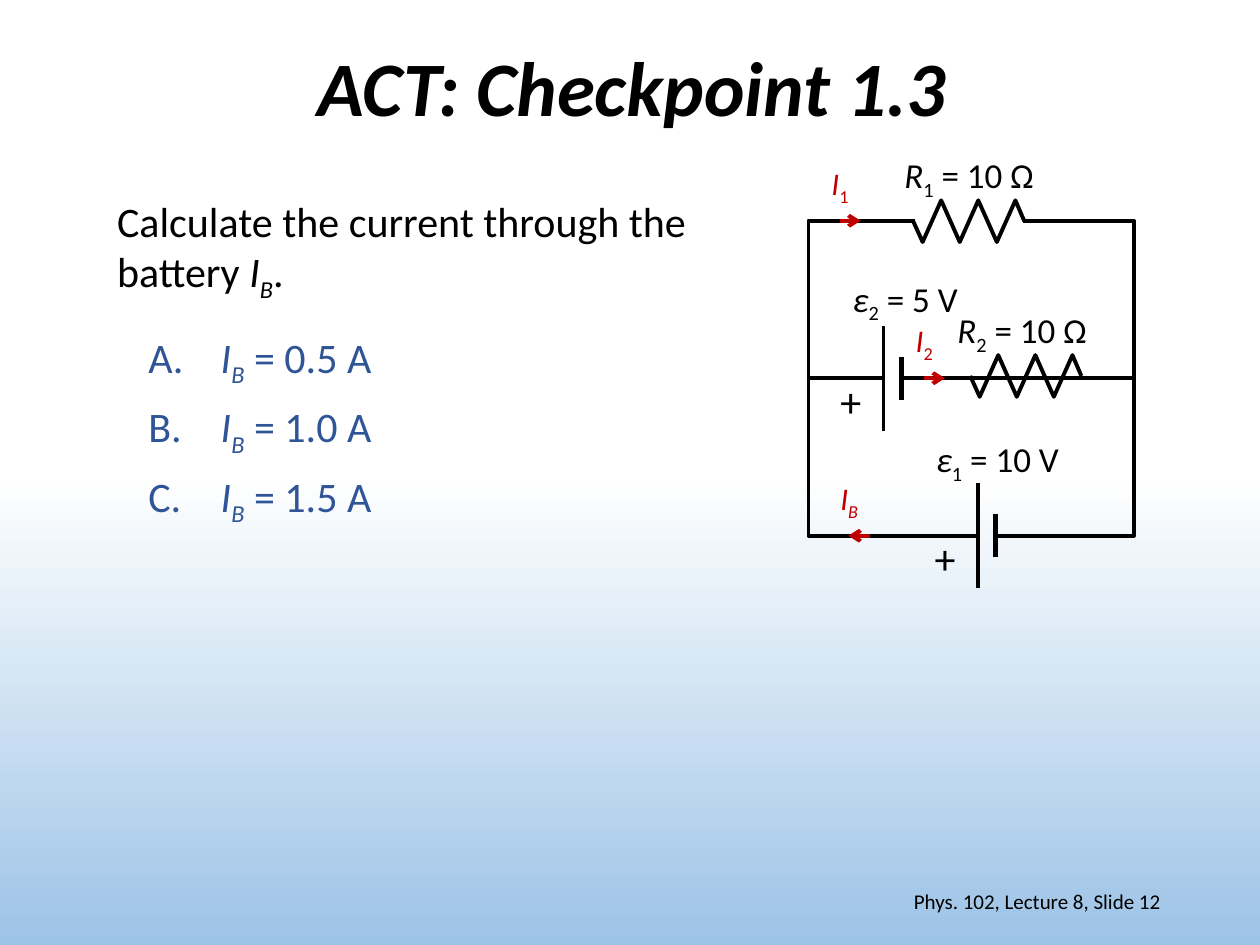
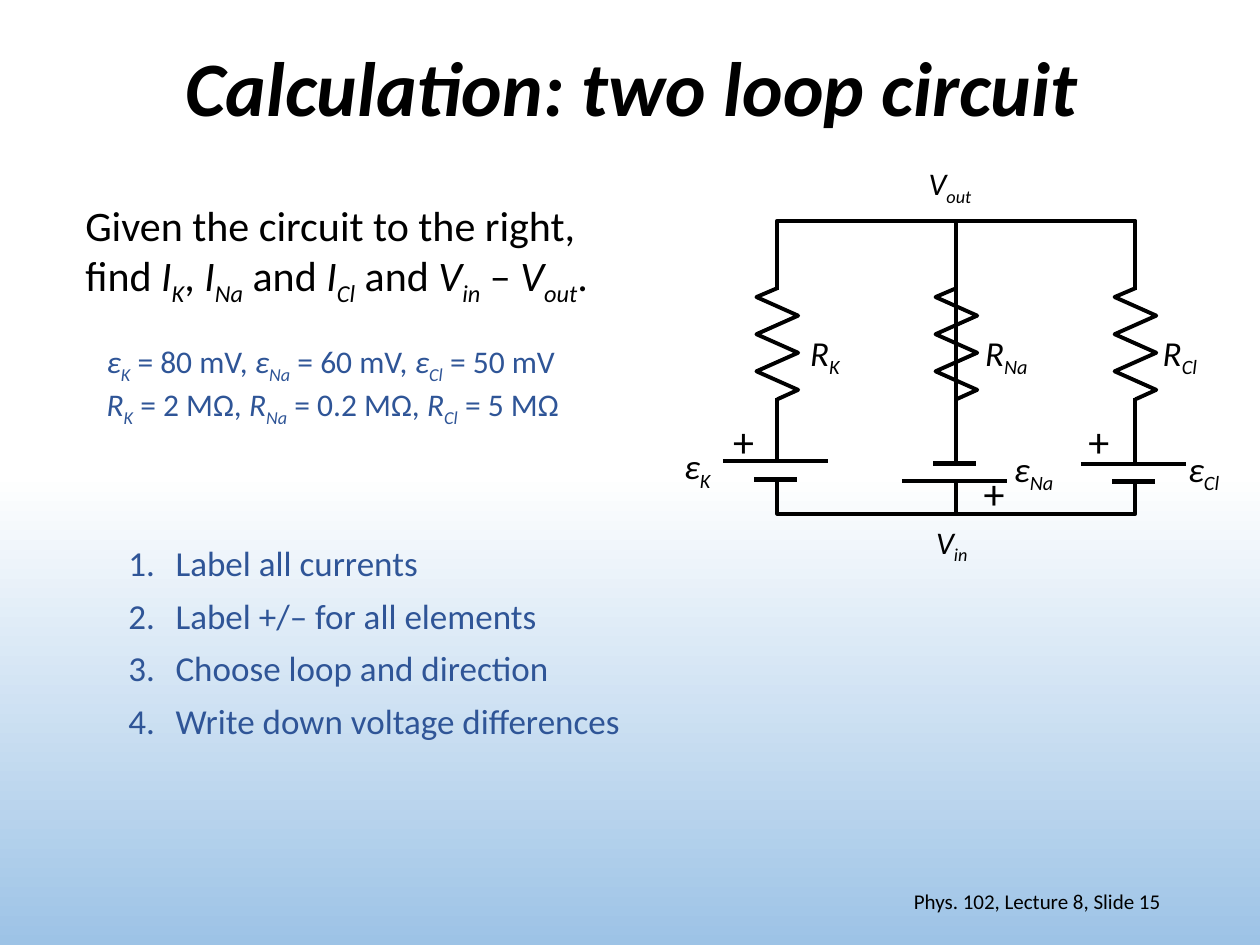
from lxml import etree
from pptx import Presentation
from pptx.dml.color import RGBColor
from pptx.enum.shapes import MSO_CONNECTOR, MSO_SHAPE
from pptx.enum.text import MSO_ANCHOR, MSO_AUTO_SIZE, PP_ALIGN
from pptx.oxml.ns import qn
from pptx.util import Cm, Pt

STRAIGHT = MSO_CONNECTOR.STRAIGHT
RECT = MSO_SHAPE.RECTANGLE
TOP, MIDDLE = MSO_ANCHOR.TOP, MSO_ANCHOR.MIDDLE
LEFT, CENTER, RIGHT = PP_ALIGN.LEFT, PP_ALIGN.CENTER, PP_ALIGN.RIGHT
GROW, FIXED = MSO_AUTO_SIZE.SHAPE_TO_FIT_TEXT, MSO_AUTO_SIZE.NONE

COLORS = {"ink": "000000", "answer": "2F5597", "current": "C00000",
          "sky_top": "FFFFFF", "sky_bottom": "9DC3E6"}
FONT = "Calibri"
PLUS = ("+",)


class Lecture:
    """Draws lecture slides with circuit diagrams, all lengths in centimetres."""

    def __init__(self):
        self.prs = Presentation()
        self.prs.slide_width, self.prs.slide_height = Cm(25.4), Cm(19.05)
        self.s = None

    def rgb(self, color):
        return RGBColor.from_string(COLORS[color])

    def slide(self, title, number):
        self.s = self.prs.slides.add_slide(self.prs.slide_layouts[6])
        fill = self.s.background.fill
        fill.gradient()
        fill.gradient_angle = 270
        for stop, pos, color in zip(fill.gradient_stops, (0.5, 1),
                                    ("sky_top", "sky_bottom")):
            stop.position = pos
            stop.color.rgb = self.rgb(color)
        tf = self.text(1.8, 0, 21.9, 3.68, [(title,)], 44, align=CENTER,
                       anchor=MIDDLE, fit=FIXED, heading=True)
        tf.paragraphs[0].line_spacing = 0.9
        self.text(17.93, 17.65, 5.72, 1.02,
                  [(f"Phys. 102, Lecture 8, Slide {number}",)], 12,
                  align=RIGHT, anchor=MIDDLE, fit=FIXED)

    def run(self, p, text, size, color, italic=False, bold=False, sub=False):
        r = p.add_run()
        r.text = text
        f = r.font
        f.name, f.size, f.italic, f.bold = FONT, Pt(size), italic, bold
        f.color.rgb = self.rgb(color)
        if sub:
            r._r.get_or_add_rPr().set("baseline", "-25000")

    def text(self, x, y, w, h, paragraphs, size, color="ink", align=LEFT,
             anchor=TOP, fit=GROW, wrap=True, heading=False):
        tf = self.s.shapes.add_textbox(Cm(x), Cm(y), Cm(w), Cm(h)).text_frame
        tf.word_wrap, tf.auto_size, tf.vertical_anchor = wrap, fit, anchor
        for i, parts in enumerate(paragraphs):
            p = tf.add_paragraph() if i else tf.paragraphs[0]
            p.alignment = align
            for part in parts:
                if isinstance(part, str):
                    self.run(p, part, size, color, heading, heading)
                else:
                    symbol, index = part
                    self.run(p, symbol, size, color, True)
                    self.run(p, index, size, color, not index.isdigit(),
                             sub=True)
        return tf

    def label(self, x, y, w, parts, size=20, color="ink"):
        self.text(x, y, w, size * 0.042 + 0.26, [parts], size, color,
                  wrap=False)

    def numbered(self, x, y, w, h, paragraphs, size, scheme, indent, after,
                 wrap=True):
        tf = self.text(x, y, w, h, paragraphs, size, "answer", wrap=wrap)
        for p in tf.paragraphs:
            p.space_after = Pt(after)
            pPr = p._p.get_or_add_pPr()
            pPr.set("marL", str(Cm(indent)))
            pPr.set("indent", str(-Cm(indent)))
            etree.SubElement(pPr, qn("a:buAutoNum")).set("type", scheme)

    def line(self, x1, y1, x2, y2, width=2.25, color="ink", arrow=False):
        c = self.s.shapes.add_connector(STRAIGHT, Cm(x1), Cm(y1), Cm(x2), Cm(y2))
        c.line.width = Pt(width)
        c.line.color.rgb = self.rgb(color)
        if arrow:
            etree.SubElement(c.line._get_or_add_ln(),
                             qn("a:tailEnd")).set("type", "arrow")
        etree.SubElement(c._element.spPr, qn("a:effectLst"))

    def outline(self, sp):
        sp.shadow.inherit = False
        sp.fill.background()
        sp.line.width = Pt(2.25)
        sp.line.color.rgb = self.rgb("ink")

    def loop(self, left, top, right, bottom):
        self.outline(self.s.shapes.add_shape(
            RECT, Cm(left), Cm(top), Cm(right - left), Cm(bottom - top)))

    def gap(self, cx, cy, w, h):
        sp = self.s.shapes.add_shape(RECT, Cm(cx - w / 2), Cm(cy - h / 2),
                                     Cm(w), Cm(h))
        sp.shadow.inherit = False
        sp.line.fill.background()
        el = sp._element
        el.remove(el.find(qn("p:style")))
        el.set("useBgFill", "1")

    def resistor(self, cx, cy, vertical=False, gap=True):
        if gap:
            self.gap(cx, cy, *((0.89, 2.18) if vertical else (2.18, 0.89)))
        zigzag = [(-0.93 + 0.374 * i, 0.42 * (-1) ** i) for i in range(6)]
        pts = [(-1.12, 0), *zigzag, (1.12, 0)]
        pts = [(Cm(cx + d), Cm(cy - a)) if vertical else (Cm(cx + a), Cm(cy + d))
               for a, d in pts]
        fb = self.s.shapes.build_freeform(*pts[0])
        fb.add_line_segments(pts[1:], close=False)
        self.outline(fb.convert_to_shape())

    def battery(self, x, y, vertical=False, side=1):
        mid = 0.18 * side
        if vertical:
            self.gap(x, y + mid, 2.51, 0.41)
        else:
            self.gap(x + mid, y, 0.41, 2.51)
        for shift, half, width in ((0, 1.06, 2.25), (2 * mid, 0.43, 3)):
            if vertical:
                self.line(x - half, y + shift, x + half, y + shift, width)
            else:
                self.line(x + shift, y + half, x + shift, y - half, width)


def checkpoint(d):
    d.slide("ACT: Checkpoint 1.3", 12)
    d.text(2.11, 3.81, 12.7, 2.31,
           [("Calculate the current through the battery ", ("I", "B"), ".")], 24)
    left, top, right, bottom = 16.3, 4.45, 22.86, 10.8
    middle = (top + bottom) / 2
    d.loop(left, top, right, bottom)
    d.line(left, middle, right, middle)
    d.resistor(20.68, 7.58, gap=False)
    d.resistor(19.53, 4.46)
    d.battery(19.71, bottom)
    d.battery(17.81, middle)
    for x, y, w, symbol, value in (
            (17.98, 2.97, 3.18, ("R", "1"), " = 10 Ω"),
            (18.62, 8.69, 3.05, ("ε", "1"), " = 10 V"),
            (16.94, 5.46, 2.69, ("ε", "2"), " = 5 V"),
            (19.05, 6.1, 3.18, ("R", "2"), " = 10 Ω")):
        d.label(x, y, w, (symbol, value))
    for x, y in ((18.59, 10.62), (16.69, 7.44)):
        d.label(x, y, 0.94, PLUS, 24)
    for x, y, index, start, end, wire in (
            (16.51, 3.18, "1", 16.94, 17.35, top),
            (18.21, 6.35, "2", 18.62, 19.05, middle),
            (16.69, 9.53, "B", 17.53, 17.1, bottom)):
        d.label(x, y, 0.9, [("I", index)], 18, "current")
        d.line(start, wire, end, wire, color="current", arrow=True)
    d.numbered(2.74, 6.55, 5.92, 3.84,
               [(" ", ("I", "B"), f" = {amps} A") for amps in ("0.5", "1.0", "1.5")],
               24, "alphaUcPeriod", 1.27, 7)


def two_loops(d):
    d.slide("Calculation: two loop circuit", 15)
    left, top, right, bottom = 15.67, 4.45, 22.89, 10.36
    middle = (left + right) / 2
    d.line(middle, top, middle, bottom)
    d.loop(left, top, right, bottom)
    for x, plate, side in ((left, 9.3, 1), (middle, 9.7, -1), (right, 9.35, 1)):
        d.resistor(x, 6.93, vertical=True, gap=x != middle)
        d.battery(x - 0.04, plate, vertical=True, side=side)
    for x, y in ((14.53, 8.26), (21.69, 8.26), (19.58, 9.3)):
        d.label(x, y, 0.94, PLUS, 24)
    for x, y, w, symbol in (
            (16.08, 6.55, 1.14, ("R", "K")), (19.61, 6.55, 1.45, ("R", "Na")),
            (23.19, 6.55, 1.27, ("R", "Cl")), (13.54, 8.84, 1.07, ("ε", "K")),
            (20.19, 8.89, 1.4, ("ε", "Na")), (23.7, 8.89, 1.19, ("ε", "Cl"))):
        d.label(x, y, w, [symbol])
    d.label(18.62, 10.41, 1.19, [("V", "in")], 18)
    d.label(18.47, 3.18, 1.42, [("V", "out")], 18)
    d.text(1.47, 3.89, 11.43, 2.31,
           [("Given the circuit to the right, find ", ("I", "K"), ", ",
             ("I", "Na"), " and ", ("I", "Cl"), " and ", ("V", "in"), " – ",
             ("V", "out"), ".")], 24)
    d.text(1.9, 6.78, 9.96, 1.8,
           [(("ε", "K"), " = 80 mV, ", ("ε", "Na"), " = 60 mV, ",
             ("ε", "Cl"), " = 50 mV"),
            (("R", "K"), " = 2 MΩ, ", ("R", "Na"), " = 0.2 MΩ, ",
             ("R", "Cl"), " = 5 MΩ")], 18, "answer")
    d.numbered(2.34, 10.8, 10.52, 4.32,
               [("Label all currents",), ("Label +/– for all elements",),
                ("Choose loop and direction",),
                ("Write down voltage differences",)],
               20, "arabicPeriod", 0.95, 6, wrap=False)


def main():
    d = Lecture()
    checkpoint(d)
    two_loops(d)
    d.prs.save("out.pptx")


if __name__ == "__main__":
    main()
